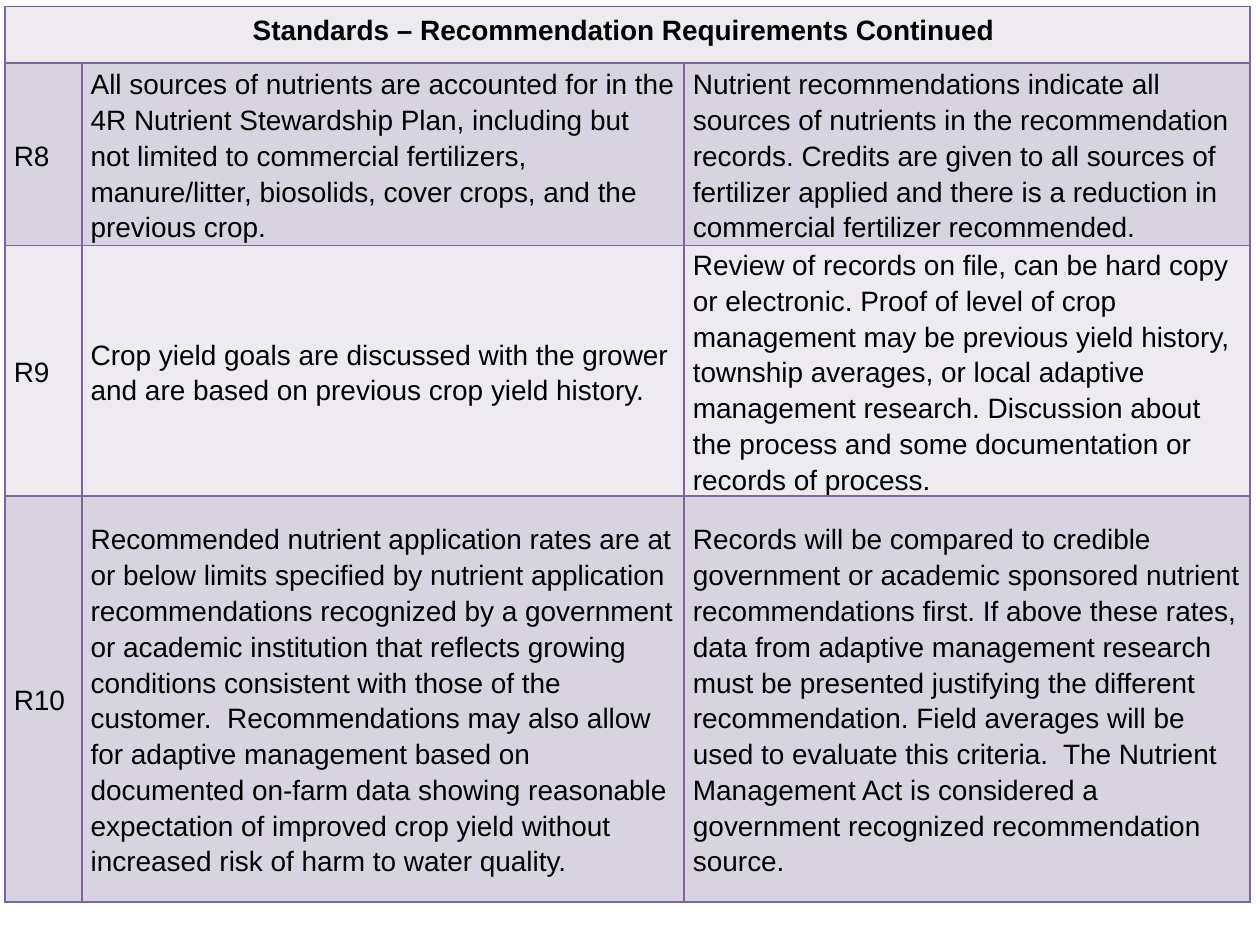
from dataclasses import dataclass

from lxml.etree import SubElement
from pptx import Presentation
from pptx.dml.color import RGBColor as Color
from pptx.enum.text import MSO_ANCHOR as Anchor, PP_ALIGN as Align
from pptx.oxml.ns import qn
from pptx.util import Inches, Pt

TITLE = "Standards – Recommendation Requirements Continued "
STANDARDS = [
    ("R8",
     "All sources of nutrients are accounted for in the 4R Nutrient Stewardship Plan, "
     "including but not limited to commercial fertilizers, manure/litter, biosolids, "
     "cover crops, and the previous crop.",
     "Nutrient recommendations indicate all sources of nutrients in the recommendation "
     "records. Credits are given to all sources of fertilizer applied and there is a "
     "reduction in commercial fertilizer recommended."),
    ("R9",
     "Crop yield goals are discussed with the grower and are based on previous crop "
     "yield history.",
     "Review of records on file, can be hard copy or electronic. Proof of level of crop "
     "management may be previous yield history, township averages, or local adaptive "
     "management research. Discussion about the process and some documentation or "
     "records of process."),
    ("R10",
     "Recommended nutrient application rates are at or below limits specified by nutrient "
     "application recommendations recognized by a government or academic institution that "
     "reflects growing conditions consistent with those of the customer.  Recommendations "
     "may also allow for adaptive management based on documented on-farm data showing "
     "reasonable expectation of improved crop yield without increased risk of harm to "
     "water quality.",
     "Records will be compared to credible government or academic sponsored nutrient "
     "recommendations first. If above these rates, data from adaptive management research "
     "must be presented justifying the different recommendation. Field averages will be "
     "used to evaluate this criteria.  The Nutrient Management Act is considered a "
     "government recognized recommendation source."),
]
COLUMN_WIDTHS = (0.61, 4.78, 4.49)
ROW_HEIGHTS = (0.45, 1.45, 1.97, 3.22)


@dataclass(frozen=True)
class Theme:
    """Colours and type of the slide."""
    font: str = "Arial"
    size: int = 16
    text: str = "000000"
    border: str = "8064A2"
    border_width: int = 1
    bands: tuple = ("EDEAF0", "D8D3E0")


def apply_format(target, values):
    """Set each attribute named in values on the target."""
    for name, value in values.items():
        setattr(target, name, value)


class SlideBuilder:
    """Hold the theme and the current slide, and add elements to it."""

    def __init__(self, slide, theme):
        """Keep the slide and its theme."""
        self.slide = slide
        self.theme = theme

    def add_table(self, left, top, widths, heights):
        """Add an empty table with the given column widths and row heights."""
        frame = self.slide.shapes.add_table(
            len(heights), len(widths), Inches(left), Inches(top),
            Inches(sum(widths)), Inches(sum(heights)))
        table = frame.table
        for column, width in zip(table.columns, widths):
            column.width = Inches(width)
        for row, height in zip(table.rows, heights):
            row.height = Inches(height)
        for row_index, row in enumerate(table.rows):
            for cell in row.cells:
                self.style_cell(cell, self.theme.bands[row_index % 2])
        return table

    def style_cell(self, cell, fill):
        """Give a cell its borders and fill."""
        properties = cell._tc.get_or_add_tcPr()
        for side in ("lnL", "lnR", "lnT", "lnB"):
            line = SubElement(properties, qn(f"a:{side}"), w=str(Pt(self.theme.border_width)))
            solid = SubElement(line, qn("a:solidFill"))
            SubElement(solid, qn("a:srgbClr"), val=self.theme.border)
        cell.fill.solid()
        cell.fill.fore_color.rgb = Color.from_string(fill)

    def write_cell(self, cell, text, margins, anchor, bold=False, **paragraph_format):
        """Write formatted text in a cell."""
        side, end = (Inches(margin) for margin in margins)
        apply_format(cell, {"margin_left": side, "margin_right": side, "margin_top": end,
                            "margin_bottom": end, "vertical_anchor": anchor})
        paragraph = cell.text_frame.paragraphs[0]
        apply_format(paragraph, paragraph_format)
        run = paragraph.add_run()
        run.text = text
        apply_format(run.font, {"name": self.theme.font, "size": Pt(self.theme.size),
                                "bold": bold})
        run.font.color.rgb = Color.from_string(self.theme.text)


def main():
    """Build the standards slide and save it."""
    presentation = Presentation()
    apply_format(presentation, {"slide_width": Inches(10), "slide_height": Inches(7.5)})
    builder = SlideBuilder(presentation.slides.add_slide(presentation.slide_layouts[6]), Theme())
    table = builder.add_table(0.04, 0.05, COLUMN_WIDTHS, ROW_HEIGHTS)
    heading = table.cell(0, 0)
    heading.merge(table.cell(0, len(COLUMN_WIDTHS) - 1))
    builder.write_cell(heading, TITLE, (0.15, 0.07), Anchor.TOP, bold=True,
                       alignment=Align.CENTER)
    for row_index, standard in enumerate(STANDARDS, start=1):
        for column_index, text in enumerate(standard):
            builder.write_cell(table.cell(row_index, column_index), text, (0.07, 0),
                               Anchor.MIDDLE, line_spacing=1.15)
    presentation.save("out.pptx")


if __name__ == "__main__":
    main()
